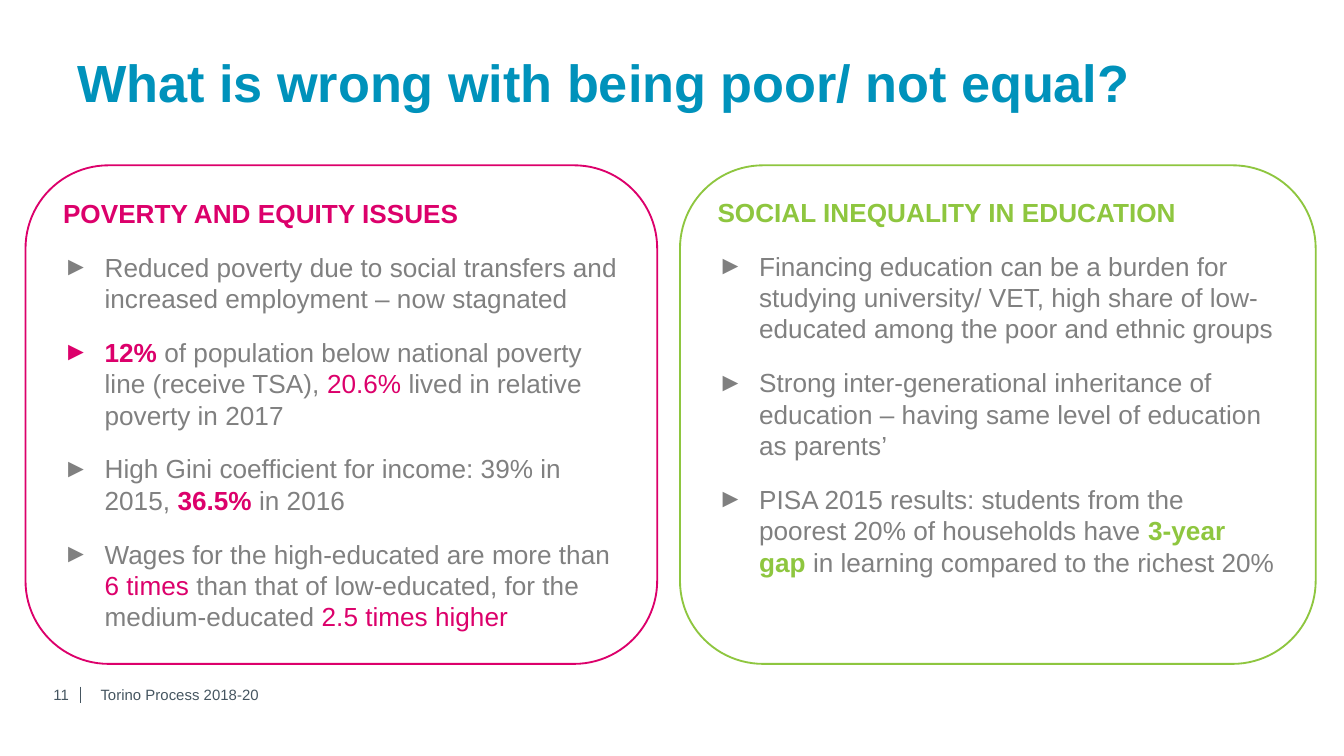
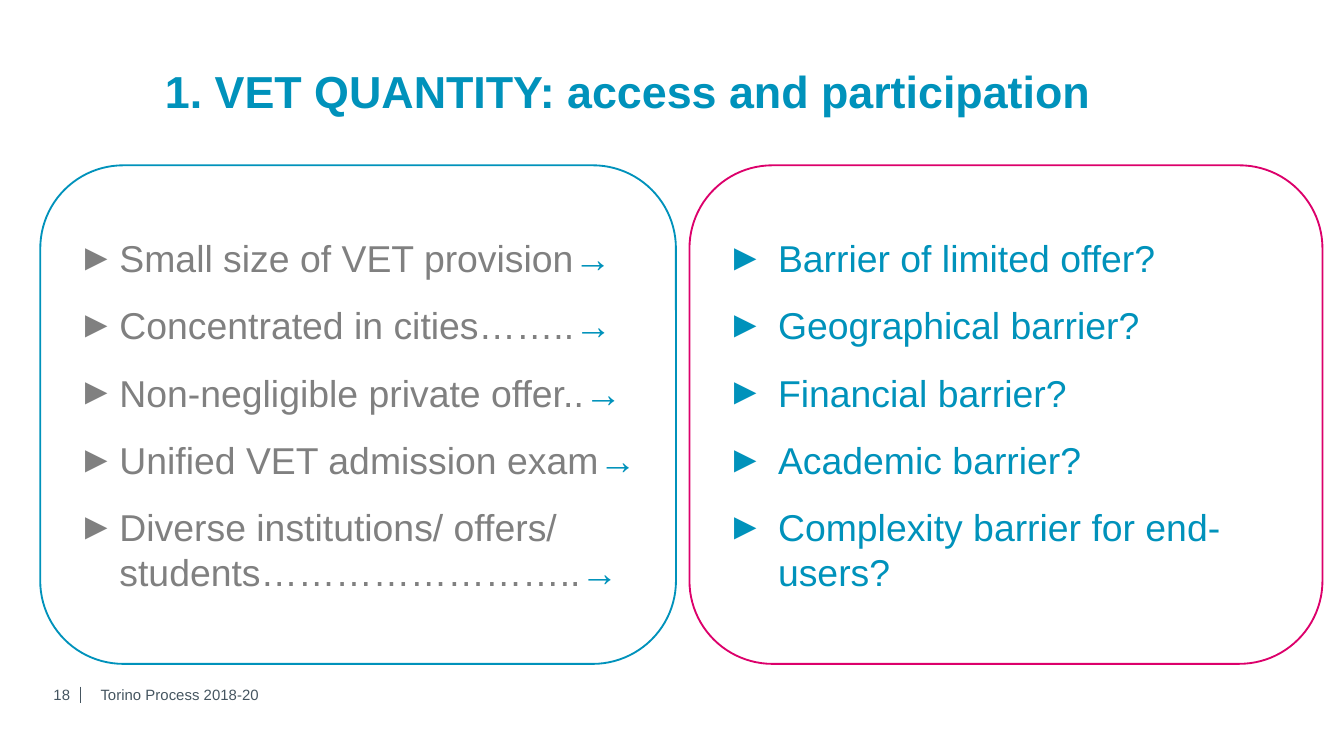
from lxml import etree
from pptx import Presentation
from pptx.dml.color import RGBColor
from pptx.enum.shapes import MSO_CONNECTOR, MSO_SHAPE
from pptx.enum.text import MSO_ANCHOR as Anchor, PP_ALIGN as Align
from pptx.oxml.ns import qn
from pptx.util import Inches, Pt

BLUE = RGBColor(0x00, 0x92, 0xBB)
PINK = RGBColor(0xDC, 0x00, 0x6B)
GREEN = RGBColor(0x8E, 0xC6, 0x3F)
GREY = RGBColor(0x80, 0x80, 0x80)
SLATE = RGBColor(0x45, 0x55, 0x60)
WHITE = RGBColor(0xFF, 0xFF, 0xFF)

FONT = "Arial"
FOOTER = "Torino Process 2018-20"
PANEL_TOP, PANEL_HEIGHT = 1.23, 3.71

# Each item is a list of spans: (text, colour, bold).
poverty_items = [
    [("Reduced poverty due to social transfers and increased employment – now stagnated", GREY, False)],
    [("12% ", PINK, True),
     ("of population below national poverty line (receive TSA), ", GREY, False),
     ("20.6%", PINK, False),
     (" lived in relative poverty in 2017", GREY, False)],
    [("High Gini coefficient for income: 39% in 2015, ", GREY, False),
     ("36.5% ", PINK, True),
     ("in 2016", GREY, False)],
    [("Wages for the high-educated are more than ", GREY, False),
     ("6 times ", PINK, False),
     ("than that of low-educated, for the medium-educated ", GREY, False),
     ("2.5 times higher", PINK, False)],
]
education_items = [
    [("Financing education can be a burden for studying university/ VET, "
      "high share of low-educated among the poor and ethnic groups", GREY, False)],
    [("Strong inter-generational inheritance of education – "
      "having same level of education as parents’", GREY, False)],
    [("PISA 2015 results: students from the poorest 20% of households have ", GREY, False),
     ("3-year gap ", GREEN, True),
     ("in learning compared to the richest 20%", GREY, False)],
]
supply_items = [
    [(text, GREY, False), ("→", BLUE, False)]
    for text in (
        "Small size of VET provision",
        "Concentrated in cities……..",
        "Non-negligible private offer..",
        "Unified VET admission exam",
        "Diverse institutions/ offers/ students……………………..",
    )
]
barrier_items = [
    [(text, BLUE, False)]
    for text in (
        "Barrier of limited offer?",
        "Geographical barrier?",
        "Financial barrier?",
        "Academic barrier?",
        "Complexity barrier for end-users?",
    )
]

# Panel: left, width, line colour, heading, items, text size, indent, anchor.
pages = [
    {
        "number": "11",
        "title": "What is wrong with being poor/ not equal?",
        "title_place": (0, 0.38, 8.98, 0.79),
        "title_size": 28,
        "panels": [
            (5.06, 4.73, GREEN, "SOCIAL INEQUALITY IN EDUCATION", education_items, 14, 0.31, Anchor.TOP),
            (0.19, 4.7, PINK, "POVERTY AND EQUITY ISSUES", poverty_items, 14, 0.31, Anchor.MIDDLE),
        ],
    },
    {
        "number": "18",
        "title": "1. VET QUANTITY: access and participation",
        "title_place": (0.3, 0.47, 8.74, 0.76),
        "title_size": 24,
        "panels": [
            (5.13, 4.71, PINK, None, barrier_items, 20, 0.38, Anchor.MIDDLE),
            (0.3, 4.73, BLUE, None, supply_items, 20, 0.31, Anchor.MIDDLE),
        ],
    },
]


def add_label(page, place, text, size, color, anchor=Anchor.MIDDLE):
    """Add a one-paragraph text box and return its paragraph."""
    box = page.shapes.add_textbox(*[Inches(value) for value in place])
    frame = box.text_frame
    frame.word_wrap = True
    frame.vertical_anchor = anchor
    frame.text = text
    para = frame.paragraphs[0]
    font = para.runs[0].font
    font.name, font.size, font.color.rgb = FONT, Pt(size), color
    return para


def add_panel(page, left, width, color, heading, items, size, indent, anchor):
    """Add a rounded panel with an optional heading and a bulleted list."""
    panel = page.shapes.add_shape(
        MSO_SHAPE.FLOWCHART_ALTERNATE_PROCESS,
        Inches(left), Inches(PANEL_TOP), Inches(width), Inches(PANEL_HEIGHT))
    panel.shadow.inherit = False
    panel.fill.solid()
    panel.fill.fore_color.rgb = WHITE
    panel.line.color.rgb = color
    panel.line.width = Pt(1)
    frame = panel.text_frame
    frame.word_wrap = True
    frame.vertical_anchor = anchor

    rows = [[(heading, color, True)]] + items if heading else items
    for index, spans in enumerate(rows):
        para = frame.add_paragraph() if index else frame.paragraphs[0]
        if index or not heading:
            props = para._p.get_or_add_pPr()
            props.set("marL", str(Inches(indent)))
            props.set("indent", str(-Inches(indent)))
            etree.SubElement(props, qn("a:buFont")).set("typeface", FONT)
            etree.SubElement(props, qn("a:buChar")).set("char", "►")
        para.alignment = Align.LEFT
        para.line_spacing = Pt(size * 1.2)
        para.space_before = Pt(6 if index else 0)
        para.space_after = Pt(6 if index < len(rows) - 1 else 0)
        for text, span_color, bold in spans:
            span = para.add_run()
            span.text = text
            span.font.name, span.font.size = FONT, Pt(size)
            span.font.bold = bold
            span.font.color.rgb = span_color


deck = Presentation()
deck.slide_width = Inches(10)
deck.slide_height = Inches(10) * 9 // 16

for content in pages:
    page = deck.slides.add_slide(deck.slide_layouts[6])

    divider = page.shapes.add_connector(
        MSO_CONNECTOR.STRAIGHT, Inches(0.6), Inches(5.11), Inches(0.6), Inches(5.23))
    divider.line.color.rgb = SLATE
    divider.line.width = Pt(0.25)
    etree.SubElement(divider._element.spPr, qn("a:effectLst"))
    add_label(page, (0.65, 5.06, 1.73, 0.21), FOOTER, 8, SLATE)
    add_label(page, (0.3, 5.06, 0.43, 0.21), content["number"], 8, SLATE)

    title = add_label(page, content["title_place"], content["title"],
                      content["title_size"], BLUE, Anchor.TOP)
    title.alignment = Align.CENTER
    title.line_spacing = 0.9
    title.runs[0].font.bold = True

    for panel in content["panels"]:
        add_panel(page, *panel)

deck.save("out.pptx")
